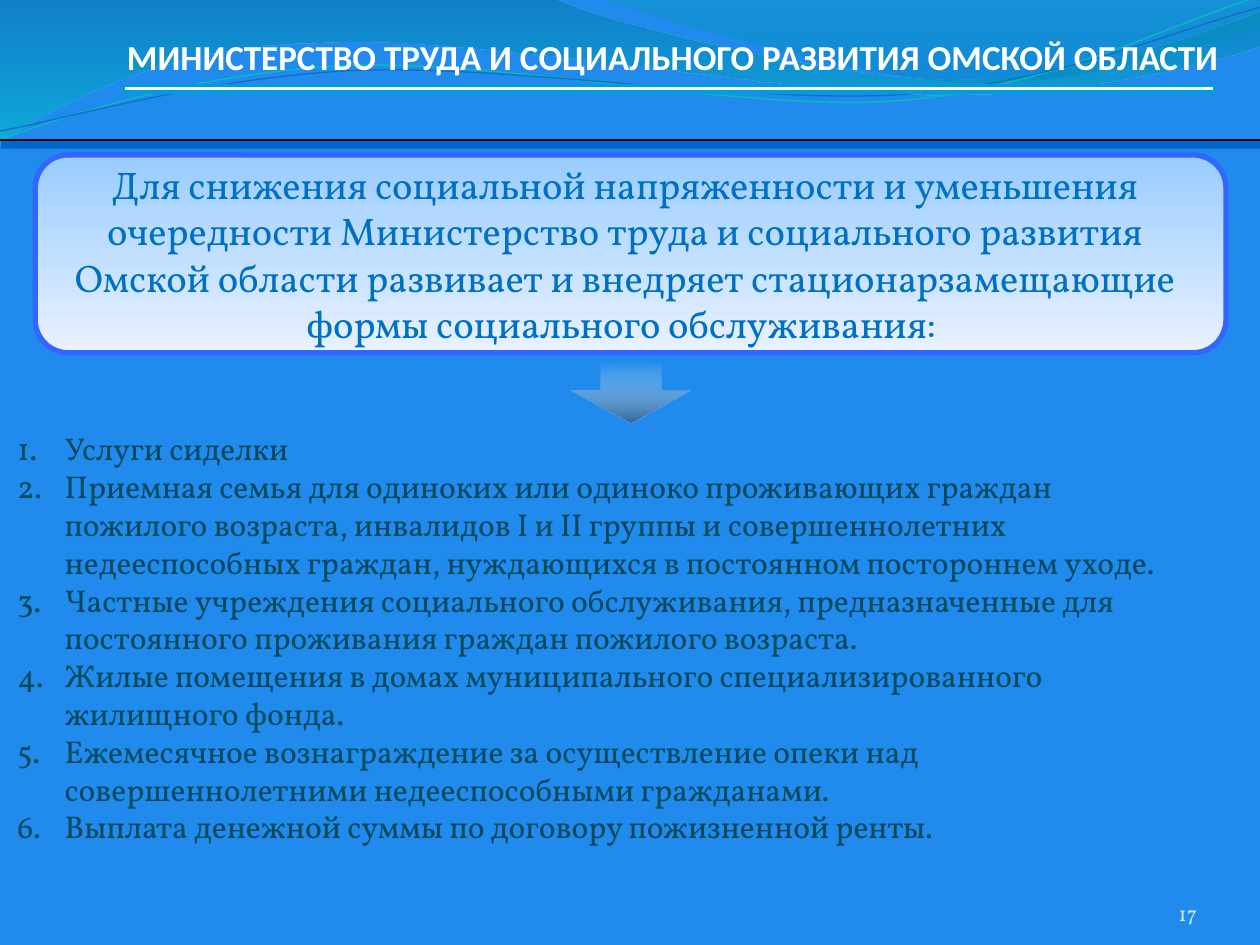
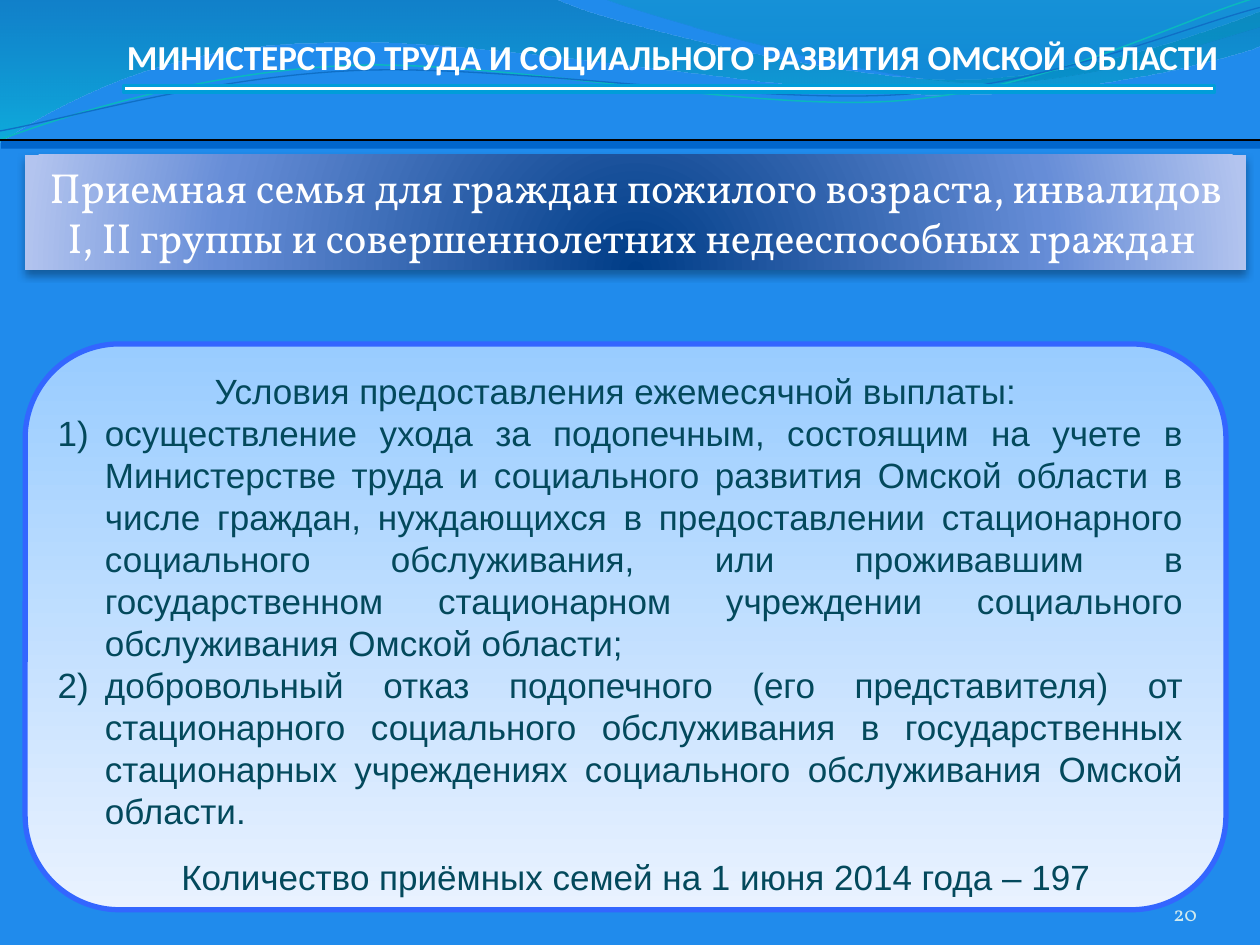
"""Two slides on social care that replaces residential institutions."""
from math import cos, radians, sin

from lxml import etree
from pptx import Presentation
from pptx.dml.color import RGBColor
from pptx.enum.shapes import MSO_CONNECTOR, MSO_SHAPE
from pptx.enum.text import MSO_ANCHOR, MSO_AUTO_SIZE, PP_ALIGN
from pptx.oxml import parse_xml
from pptx.oxml.ns import nsdecls, qn
from pptx.util import Inches, Pt

rgb = RGBColor.from_string
BLUE, INK, WHITE = "208BEC", "03495C", "FFFFFF"
SERIF, SANS = "Vollkorn", "Arial"
DOWN = '<a:lin ang="5400000" scaled="0"/>'
FROM_BELOW = ('<a:path path="circle"><a:fillToRect l="50000" t="130000" '
              'r="50000" b="-30000"/></a:path>')
TILT = 2.7

BANDS = [
    ([(0, -0.01), (4.4, -0.01), (4.76, 0.17), (6.64, 0.63), (7.58, 0.63),
      (8.53, 0.63), (9.58, 0.26), (10, 0.09), (10.01, 0.36),
      (9.83, 0.44), (8.7, 0.76), (7.46, 0.75), (6.22, 0.75), (3.82, 0.28), (2.57, 0.34),
      (1.29, 0.35), (0.46, 0.83), (-0.01, 1.13)],
     "LCCLCCC", [(0, "0074A1", 45), (100, "00C6CF", 55)]),
    ([(4.79, -0.01), (5.09, 0.11), (6.82, 0.62), (7.69, 0.65),
      (8.56, 0.69), (9.61, 0.32), (10, 0.21), (10, 0)],
     "CCL", [(0, "00A1A9", 30), (80, "008BBF", 45)]),
]
WAVES = [
    ([(0, 1.11), (0.48, 0.93), (1.58, 0.57), (2.77, 0.52), (3.95, 0.47), (5.93, 0.89),
      (7.13, 0.8), (8.33, 0.71), (9.38, 0.15), (9.98, -0.02)], "0AB8BF", 0.85),
    ([(0, 1.04), (0.47, 0.96), (1.64, 0.61), (2.83, 0.56), (4.03, 0.51), (5.97, 0.83),
      (7.17, 0.75), (8.36, 0.67), (9.41, 0.21), (10, 0.06)], "0F6FC6", 0.75),
]
SERVICES = [
    "Услуги сиделки",
    "Приемная семья для одиноких или одиноко проживающих граждан пожилого "
    "возраста, инвалидов I и II группы и совершеннолетних недееспособных "
    "граждан, нуждающихся в постоянном постороннем уходе.",
    "Частные учреждения социального обслуживания, предназначенные для "
    "постоянного проживания граждан пожилого возраста.",
    "Жилые помещения в домах муниципального специализированного жилищного фонда.",
    "Ежемесячное вознаграждение за осуществление опеки над "
    "совершеннолетними недееспособными гражданами.",
    "Выплата денежной суммы по договору пожизненной ренты.",
]
CONDITIONS = [
    "Условия предоставления ежемесячной выплаты: ",
    "осуществление ухода за подопечным, состоящим на учете в Министерстве "
    "труда и социального развития Омской области в числе граждан, нуждающихся "
    "в предоставлении стационарного социального обслуживания, или проживавшим "
    "в государственном стационарном учреждении социального обслуживания "
    "Омской области;",
    "добровольный отказ подопечного (его представителя) от стационарного "
    "социального обслуживания в государственных стационарных учреждениях "
    "социального обслуживания Омской области.",
]


def gradient(sp, stops, direction=DOWN):
    sp.fill.background()
    gs = "".join(f'<a:gs pos="{pos * 1000}"><a:srgbClr val="{color}">'
                 f'<a:alpha val="{alpha * 1000}"/></a:srgbClr></a:gs>'
                 for pos, color, alpha in stops)
    xml = (f'<a:gradFill {nsdecls("a")} rotWithShape="1">'
           f'<a:gsLst>{gs}</a:gsLst>{direction}</a:gradFill>')
    spPr = sp._element.spPr
    spPr.replace(spPr.find(qn("a:noFill")), parse_xml(xml))


def write(sp, lines, font, size, color, align=PP_ALIGN.LEFT, number=None, headings=0):
    tf = sp.text_frame
    tf.word_wrap = True
    tf.text = "\n".join(lines)
    for i, p in enumerate(tf.paragraphs):
        p.alignment = align
        if number and i >= headings:
            pPr = p._p.get_or_add_pPr()
            pPr.set("marL", str(Pt(27)))
            pPr.set("indent", str(-Pt(27)))
            etree.SubElement(pPr, qn("a:buFont"), typeface="+mj-lt")
            etree.SubElement(pPr, qn("a:buAutoNum"), type=number)
        for r in p.runs:
            r.font.name, r.font.size = font, Pt(size)
            r.font.color.rgb = rgb(color)
    return tf


prs = Presentation()
prs.slide_width, prs.slide_height = Inches(10), Inches(7.5)
layout = prs.slide_layouts[6]
for ph in list(layout.placeholders):
    layout.shapes._spTree.remove(ph._element)
layout.background.fill.solid()
layout.background.fill.fore_color.rgb = rgb(BLUE)
slides = [prs.slides.add_slide(layout) for _ in range(2)]

s = slides[0]
wave_group = None
turn = radians(TILT)
outlines = [(pts, kinds, stops, None, None) for pts, kinds, stops in BANDS]
outlines += [(pts, "CCC", None, color, width) for pts, color, width in WAVES]
for pts, kinds, stops, color, width in outlines:
    shapes = s.shapes
    if not stops:
        wave_group = wave_group or s.shapes.add_group_shape()
        shapes = wave_group.shapes
        cx, cy = (pts[0][0] + pts[-1][0]) / 2, (pts[0][1] + pts[-1][1]) / 2
        pts = [(cx + (x - cx) * cos(turn) - (y - cy) * sin(turn),
                cy + (x - cx) * sin(turn) + (y - cy) * cos(turn)) for x, y in pts]
    emu = [(Inches(x), Inches(y)) for x, y in pts]
    fb = shapes.build_freeform(*emu[0])
    fb.add_line_segments(emu[1:], close=bool(stops))
    sp = fb.convert_to_shape()
    lines = iter(list(sp._element.iter(qn("a:lnTo"))))
    for kind in kinds:
        first = next(lines)
        if kind == "C":
            curve = etree.Element(qn("a:cubicBezTo"))
            first.addprevious(curve)
            for ln in (first, next(lines), next(lines)):
                curve.append(ln[0])
                ln.getparent().remove(ln)
    sp.shadow.inherit = False
    if stops:
        gradient(sp, stops)
        sp.line.fill.background()
    else:
        sp.rotation = 360 - TILT
        sp.fill.background()
        sp.line.color.rgb, sp.line.width = rgb(color), Pt(width)

group = s.shapes.add_group_shape()
header = group.shapes.add_textbox(*map(Inches, (0.91, 0.21, 8.9, 0.47)))
tf = write(header, ["МИНИСТЕРСТВО ТРУДА И СОЦИАЛЬНОГО РАЗВИТИЯ ОМСКОЙ ОБЛАСТИ"],
           "Calibri", 20, WHITE)
tf.word_wrap = False
tf.vertical_anchor = MSO_ANCHOR.MIDDLE
r = tf.paragraphs[0].runs[0]
r.font.bold = True
r._r.rPr.find(qn("a:solidFill")).addnext(parse_xml(
    f'<a:effectLst {nsdecls("a")}><a:outerShdw blurRad="{Pt(3)}" dist="{Pt(3)}" dir="2700000">'
    '<a:srgbClr val="000000"><a:alpha val="43000"/></a:srgbClr></a:outerShdw></a:effectLst>'))
underline = group.shapes.add_shape(MSO_SHAPE.RECTANGLE, *map(Inches, (0.98, 0.68, 8.66, 0.05)))
underline.shadow.inherit = False
underline.fill.solid()
underline.fill.fore_color.rgb = rgb(WHITE)
underline.line.color.rgb, underline.line.width = rgb("009DD9"), Pt(2)

for sp in list(s.shapes):
    layout.shapes._spTree.append(sp._element)

PAGES = [("17", (0.28, 1.23, 9.45, 1.57)), ("20", (0.2, 2.73, 9.53, 4.49))]
for s, (number, panel_box) in zip(slides, PAGES):
    panel = s.shapes.add_shape(MSO_SHAPE.ROUNDED_RECTANGLE, *map(Inches, panel_box))
    panel.shadow.inherit = False
    gradient(panel, [(0, "99CCFF", 100), (100, "E9F2FF", 100)])
    panel.line.color.rgb, panel.line.width = rgb("3366FF"), Pt(3)

    bar = s.shapes.add_shape(MSO_SHAPE.RECTANGLE, *map(Inches, (0.01, 1.11, 10, 0.07)))
    bar.shadow.inherit = False
    bar.fill.solid()
    bar.fill.fore_color.rgb = rgb("0066CC")
    bar.line.fill.background()

    rule = s.shapes.add_connector(MSO_CONNECTOR.STRAIGHT, 0, Inches(1.11), Inches(10), Inches(1.11))
    rule.line.color.rgb, rule.line.width = rgb("000000"), Pt(1.5)
    etree.SubElement(rule._element.spPr, qn("a:effectLst"))

    page = s.shapes.add_textbox(*map(Inches, (8.67, 6.95, 0.83, 0.4)))
    tf = write(page, [number], SERIF, 12, "D1EAEE", PP_ALIGN.RIGHT)
    tf.margin_left = tf.margin_right = tf.margin_top = tf.margin_bottom = 0
    tf.vertical_anchor = MSO_ANCHOR.BOTTOM

s = slides[0]
intro = s.shapes.add_textbox(*map(Inches, (0.35, 1.23, 9.22, 1.58)))
tf = write(intro, ["Для снижения социальной напряженности и уменьшения очередности "
                   "Министерство труда и социального развития Омской области развивает "
                   "и внедряет стационарзамещающие формы социального обслуживания: "],
           SERIF, 22, "0070C0", PP_ALIGN.CENTER)
tf.auto_size = MSO_AUTO_SIZE.SHAPE_TO_FIT_TEXT
services = s.shapes.add_textbox(*map(Inches, (0.04, 3.36, 9.53, 3.43)))
tf = write(services, SERVICES, SERIF, 18, INK, number="arabicPeriod")
tf.auto_size = MSO_AUTO_SIZE.SHAPE_TO_FIT_TEXT
arrow = s.shapes.add_shape(MSO_SHAPE.UP_ARROW, *map(Inches, (4.53, 2.88, 0.95, 0.47)))
arrow.rotation = 180
arrow.adjustments[0], arrow.adjustments[1] = 0.5, 0.54
arrow.shadow.inherit = False
arrow.line.fill.background()
gradient(arrow, [(0, "336699", 100), (100, WHITE, 0)])

s = slides[1]
title = s.shapes.add_shape(MSO_SHAPE.RECTANGLE, *map(Inches, (0.2, 1.23, 9.69, 0.91)))
title.line.fill.background()
gradient(title, [(0, "003D87", 100), (68, "668DD7", 100), (100, "B3C4EF", 100)], FROM_BELOW)
title.shadow.inherit = False
title._element.spPr.find(qn("a:effectLst")).append(parse_xml(
    f'<a:outerShdw {nsdecls("a")} blurRad="{Pt(4.5)}" dist="{Pt(3)}" dir="5400000" '
    'rotWithShape="0"><a:srgbClr val="042747"><a:alpha val="48000"/></a:srgbClr></a:outerShdw>'))
tf = write(title, ["Приемная семья для граждан пожилого возраста, инвалидов I, II группы "
                   "и совершеннолетних недееспособных граждан "],
           SERIF, 24, WHITE, PP_ALIGN.CENTER)
tf.vertical_anchor = MSO_ANCHOR.TOP
conditions = s.shapes.add_textbox(*map(Inches, (0.36, 2.88, 9.13, 3.8)))
tf = write(conditions, CONDITIONS, SANS, 20, INK, PP_ALIGN.JUSTIFY, "arabicParenR", headings=1)
tf.paragraphs[0].alignment = PP_ALIGN.CENTER
for p in tf.paragraphs:
    p.line_spacing = Pt(24)
total = s.shapes.add_textbox(*map(Inches, (1.34, 6.74, 8.22, 0.44)))
write(total, ["Количество приёмных семей на 1 июня 2014 года – 197"], SANS, 20, INK)

prs.save("out.pptx")
